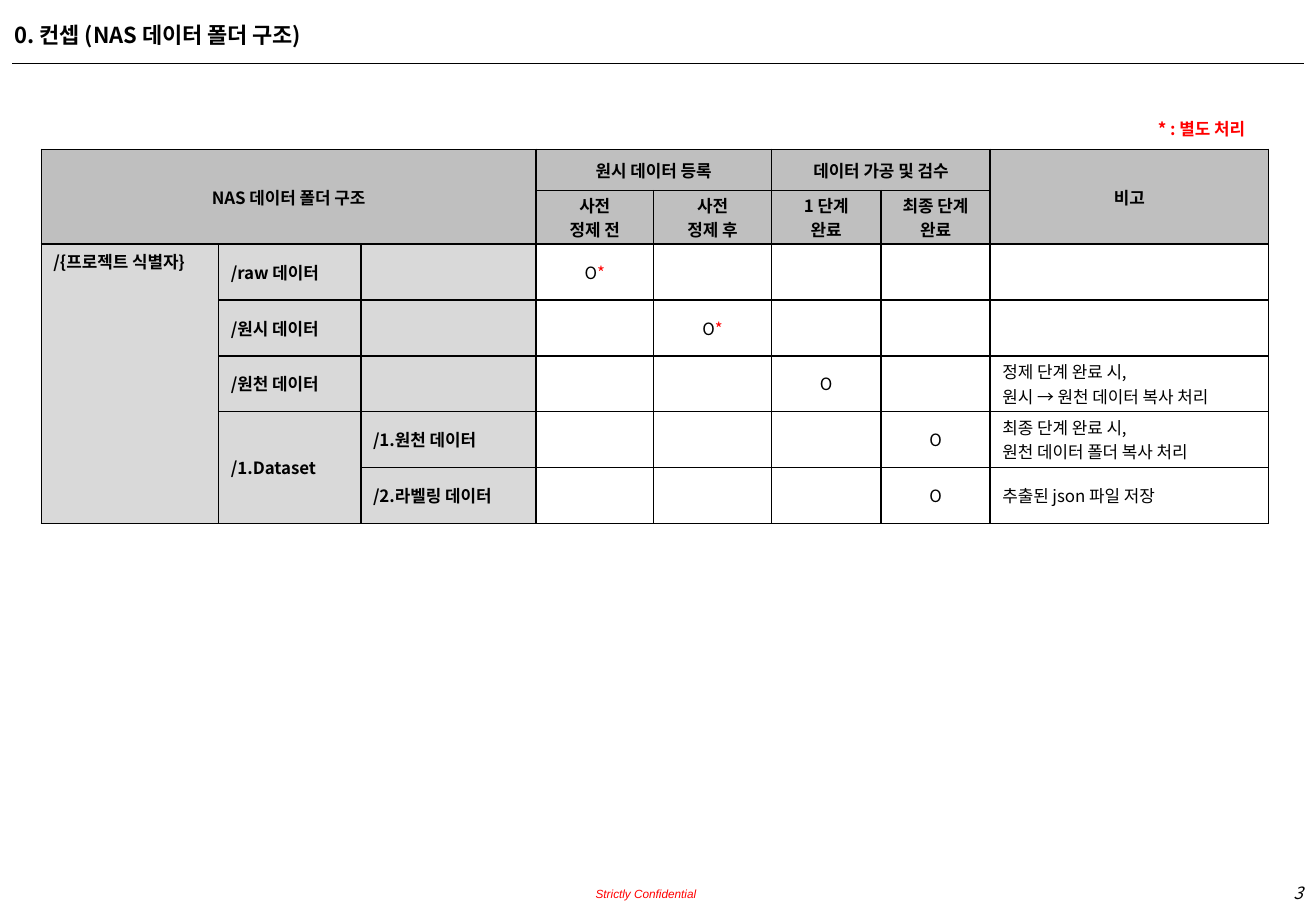
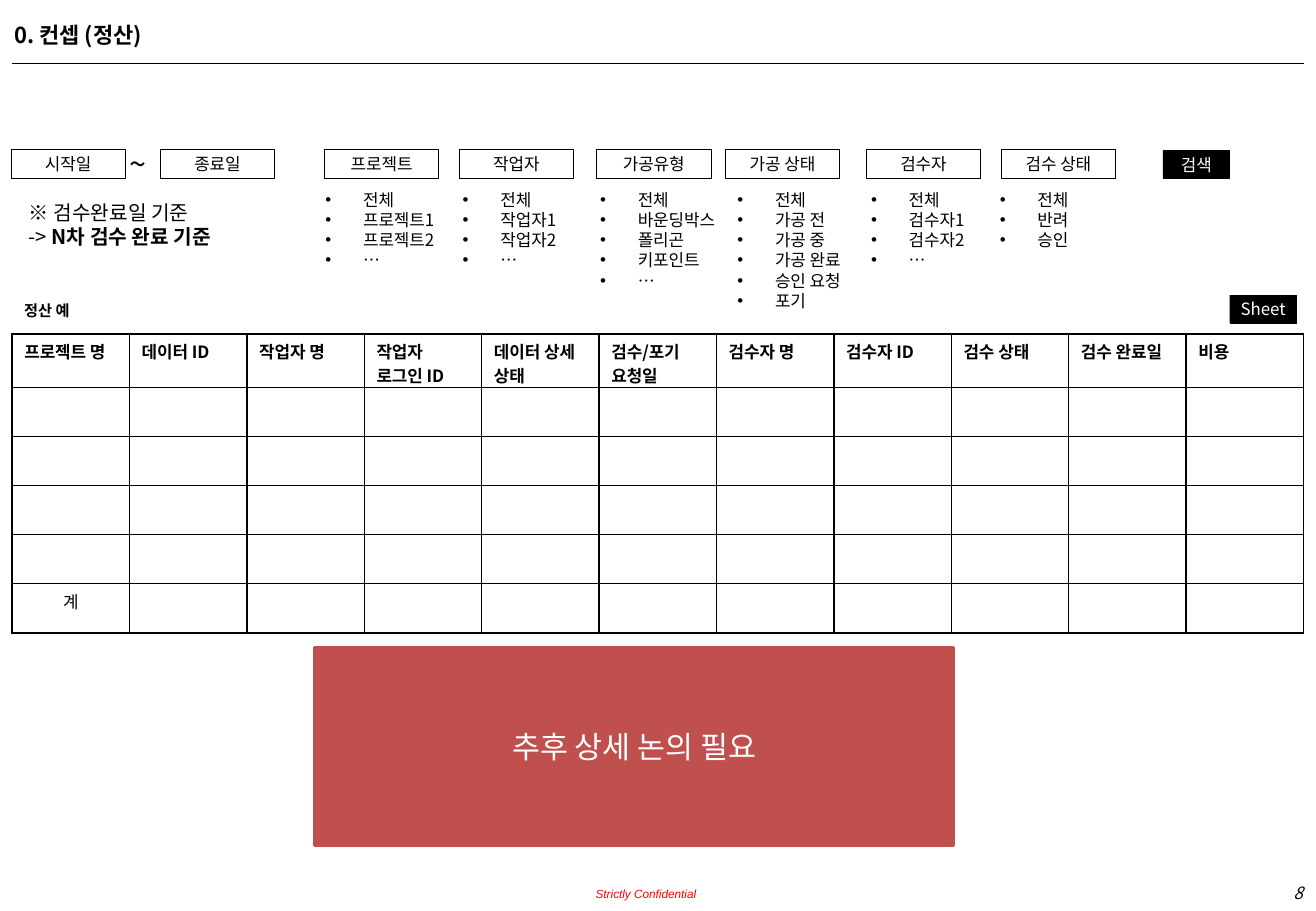
from lxml.etree import SubElement
from pptx import Presentation
from pptx.dml.color import RGBColor
from pptx.enum.shapes import MSO_CONNECTOR, MSO_SHAPE
from pptx.enum.text import MSO_ANCHOR, MSO_AUTO_SIZE, PP_ALIGN
from pptx.oxml.ns import qn
from pptx.util import Inches, Pt

BLACK = RGBColor(0x00, 0x00, 0x00)
WHITE = RGBColor(0xFF, 0xFF, 0xFF)
RED = RGBColor(0xFF, 0x00, 0x00)
BRICK = RGBColor(0xC0, 0x50, 0x4D)
HEAD_GRAY = RGBColor(0xBF, 0xBF, 0xBF)
PATH_GRAY = RGBColor(0xD9, 0xD9, 0xD9)

FONT = "Noto Sans CJK KR"
SLIDE_W, SLIDE_H = 10.83, 7.5
MARGIN = 0.1
CONTENT_W = SLIDE_W - 2 * MARGIN
BUTTON_H = 0.24
BUTTON_W = 0.94
ACTION_W = 0.55
FILTER_TOP = 1.23
LINE_RATIO, CELL_LINE_RATIO = 1.2, 1.44

FOLDER_COLS = [1.46, 1.17, 1.44, 0.97, 0.97, 0.9, 0.9, 2.29]
FOLDER_ROWS = [0.34, 0.44] + [0.46] * 5
FOLDER_CELLS = [
    ["NAS 데이터 폴더 구조", "", "", "원시 데이터 등록", "", "데이터 가공 및 검수", "", "비고"],
    ["", "", "", "사전\n정제 전", "사전\n정제 후", "1 단계\n완료", "최종 단계\n완료", ""],
    ["/{프로젝트 식별자}", "/raw 데이터", "", "O*", "", "", "", ""],
    ["", "/원시 데이터", "", "", "O*", "", "", ""],
    ["", "/원천 데이터", "", "", "", "O", "",
     "정제 단계 완료 시,\n원시 → 원천 데이터 복사 처리"],
    ["", "/1.Dataset", "/1.원천 데이터", "", "", "", "O",
     "최종 단계 완료 시,\n원천 데이터 폴더 복사 처리"],
    ["", "", "/2.라벨링 데이터", "", "", "", "O", "추출된 json 파일 저장"],
]
FOLDER_MERGES = [((0, 0), (1, 2)), ((0, 3), (0, 4)), ((0, 5), (0, 6)),
                 ((0, 7), (1, 7)), ((2, 0), (6, 0)), ((5, 1), (6, 1))]

PAY_HEADERS = ["프로젝트 명", "데이터 ID", "작업자 명", "작업자 로그인 ID",
               "데이터 상세 상태", "검수/포기 요청일", "검수자 명", "검수자 ID",
               "검수 상태", "검수 완료일", "비용"]
PAY_H, PAY_HEAD_H, PAY_BODY_ROWS = 2.46, 0.44, 5
PAY_ROWS = [PAY_HEAD_H] + [(PAY_H - PAY_HEAD_H) / PAY_BODY_ROWS] * PAY_BODY_ROWS

DATE_BUTTONS = [("시작일", 0.09), ("종료일", 1.32)]
FILTERS = [
    ("프로젝트", 2.67, 2.58, 1.16, ["전체", "프로젝트1", "프로젝트2", "…"]),
    ("작업자", 3.78, 3.71, 1.04, ["전체", "작업자1", "작업자2", "…"]),
    ("가공유형", 4.91, 4.84, 1.22, ["전체", "바운딩박스", "폴리곤", "키포인트", "…"]),
    ("가공 상태", 5.97, 5.97, 1.13,
     ["전체", "가공 전", "가공 중", "가공 완료", "승인 요청", "포기"]),
    ("검수자", 7.13, 7.07, 1.04, ["전체", "검수자1", "검수자2", "…"]),
    ("검수 상태", 8.24, 8.13, 0.8, ["전체", "반려", "승인"]),
]


def add_run(p, text, color, name=FONT, **font):
    r = p.add_run()
    r.text = text
    for key, value in {"name": name, **font}.items():
        setattr(r.font, key, value)
    r.font.color.rgb = color
    SubElement(r._r.get_or_add_rPr(), qn("a:ea")).set("typeface", name)


def add_bullet(p):
    pPr = p._p.get_or_add_pPr()
    pPr.set("marL", str(Inches(0.31)))
    pPr.set("indent", str(-Inches(0.31)))
    SubElement(pPr, qn("a:buFont")).set("typeface", "Arial")
    SubElement(pPr, qn("a:buChar")).set("char", "•")


def write(tf, lines, size=10, color=BLACK, align=PP_ALIGN.LEFT, bullets=False,
          ratio=LINE_RATIO, **font):
    for i, line in enumerate(lines):
        p = tf.add_paragraph() if i else tf.paragraphs[0]
        p.alignment = align
        p.line_spacing = Pt(round(size * ratio, 1))
        if bullets:
            add_bullet(p)
        for text, extra in [(line, {})] if isinstance(line, str) else line:
            add_run(p, text, **{"color": color, "size": Pt(size), **font, **extra})


def set_frame(tf, anchor=MSO_ANCHOR.TOP, inset=None):
    for key, value in {"word_wrap": True, "auto_size": MSO_AUTO_SIZE.NONE,
                       "vertical_anchor": anchor}.items():
        setattr(tf, key, value)
    x, y = inset or (0.1, 0.05)
    tf.margin_left = tf.margin_right = Inches(x)
    tf.margin_top = tf.margin_bottom = Inches(y)


def add_text(s, box, lines, anchor=MSO_ANCHOR.TOP, inset=None, **style):
    tf = s.shapes.add_textbox(*map(Inches, box)).text_frame
    set_frame(tf, anchor, inset)
    write(tf, lines, **style)


def add_box(s, box, text, fill=None, line=BLACK, line_w=0.25, **style):
    sp = s.shapes.add_shape(MSO_SHAPE.RECTANGLE, *map(Inches, box))
    sp.shadow.inherit = False
    if fill is None:
        sp.fill.background()
    else:
        sp.fill.solid()
        sp.fill.fore_color.rgb = fill
    sp.line.color.rgb = line
    sp.line.width = Pt(line_w)
    set_frame(sp.text_frame, MSO_ANCHOR.MIDDLE, (0, 0))
    write(sp.text_frame, [text], align=PP_ALIGN.CENTER, **style)


def add_rule(s, y):
    rule = s.shapes.add_connector(MSO_CONNECTOR.STRAIGHT, Inches(MARGIN), Inches(y),
                                  Inches(SLIDE_W - MARGIN), Inches(y))
    rule.line.color.rgb = BLACK
    rule.line.width = Pt(0.75)
    SubElement(rule._element.spPr, qn("a:effectLst"))


def add_borders(cell):
    tcPr = cell._tc.get_or_add_tcPr()
    for side in ("lnL", "lnR", "lnT", "lnB"):
        ln = SubElement(tcPr, qn(f"a:{side}"), w=str(Pt(1)))
        solid = SubElement(ln, qn("a:solidFill"))
        SubElement(solid, qn("a:srgbClr")).set("val", str(BLACK))


def format_cell(cell, text, anchor, fill=None, **style):
    add_borders(cell)
    if fill is None:
        cell.fill.background()
    else:
        cell.fill.solid()
        cell.fill.fore_color.rgb = fill
    top, bottom = (0.02, 0.02) if anchor == MSO_ANCHOR.MIDDLE else (0.04, 0)
    for key, value in {"vertical_anchor": anchor, "margin_top": Inches(top),
                       "margin_bottom": Inches(bottom)}.items():
        setattr(cell, key, value)
    if text:
        lines = [[("O", {}), ("*", {"color": RED})]] if text == "O*" else text.split("\n")
        write(cell.text_frame, lines, ratio=CELL_LINE_RATIO, **style)
    else:
        SubElement(cell.text_frame.paragraphs[0]._p, qn("a:endParaRPr")).set("sz", "1000")


def add_grid(s, left, top, cols, rows, cells, style_of, merges=()):
    frame = s.shapes.add_table(len(rows), len(cols), Inches(left), Inches(top),
                               Inches(sum(cols)), Inches(sum(rows)))
    table = frame.table
    table.first_row = table.horz_banding = False
    for col, width in zip(table.columns, cols):
        col.width = Inches(width)
    for row, height in zip(table.rows, rows):
        row.height = Inches(height)
    for r, texts in enumerate(cells):
        for c, text in enumerate(texts):
            format_cell(table.cell(r, c), text, **style_of(r, c))
    for first, last in merges:
        table.cell(*first).merge(table.cell(*last))


def folder_style(r, c):
    is_head, is_path = r < 2, c < 3
    fill = HEAD_GRAY if is_head else PATH_GRAY if is_path else None
    centred = is_head or 3 <= c < 7
    return {"anchor": MSO_ANCHOR.TOP if (r, c) == (2, 0) else MSO_ANCHOR.MIDDLE,
            "fill": fill, "bold": is_head or is_path,
            "align": PP_ALIGN.CENTER if centred else PP_ALIGN.LEFT}


def pay_style(r, c):
    return {"anchor": MSO_ANCHOR.TOP, "bold": r == 0,
            "align": PP_ALIGN.CENTER if r else PP_ALIGN.LEFT}


def add_page(prs, title, number):
    s = prs.slides.add_slide(prs.slide_layouts[5])
    heading = s.shapes.title
    for key, value in zip(("left", "top", "width", "height"), (0.02, 0.13, 10.52, 0.32)):
        setattr(heading, key, Inches(value))
    set_frame(heading.text_frame)
    write(heading.text_frame, [title], size=13, bold=True)
    add_rule(s, 0.52)
    add_text(s, (4.2, 7.18, 1.53, 0.24), ["Strictly Confidential"], MSO_ANCHOR.BOTTOM,
             (0, 0), size=7, color=RED, align=PP_ALIGN.RIGHT, name="Arial", italic=True)
    add_text(s, (9.15, 7.22, 1.67, 0.27), [str(number)], align=PP_ALIGN.RIGHT, italic=True)
    return s


def build_folders(prs):
    s = add_page(prs, "0. 컨셉 (NAS 데이터 폴더 구조)", 3)
    add_grid(s, 0.34, 1.23, FOLDER_COLS, FOLDER_ROWS, FOLDER_CELLS, folder_style,
             FOLDER_MERGES)
    add_text(s, (9.43, 0.93, 1.16, 0.27), ["* : 별도 처리"], color=RED, bold=True)


def build_payment(prs):
    s = add_page(prs, "0. 컨셉 (정산)", 8)
    n = len(PAY_HEADERS)
    blank = [""] * n
    cells = [PAY_HEADERS] + [blank] * (PAY_BODY_ROWS - 1) + [["계"] + blank[1:]]
    add_grid(s, MARGIN, 2.75, [CONTENT_W / n] * n, PAY_ROWS, cells, pay_style)
    add_text(s, (MARGIN, 2.43, 0.7, 0.25), ["정산 예"], size=9, bold=True)
    for label, left in DATE_BUTTONS:
        add_box(s, (left, FILTER_TOP, BUTTON_W, BUTTON_H), label)
    add_text(s, (0.97, 1.15, 0.38, 0.4), ["~"], size=18)
    for label, left, list_left, list_w, items in FILTERS:
        add_box(s, (left, FILTER_TOP, BUTTON_W, BUTTON_H), label)
        add_text(s, (list_left, 1.51, list_w, 0.1 + len(items) / 6), items, bullets=True)
    for label, left, top in [("검색", 9.57, 1.24), ("Sheet", 10.12, 2.43)]:
        add_box(s, (left, top, ACTION_W, 0.23), label, fill=BLACK, color=WHITE)
    add_text(s, (0.14, 1.6, 1.93, 0.5),
             ["※ 검수완료일 기준", [("-> ", {}), ("N차 검수 완료 기준", {"bold": True})]],
             size=12)
    add_box(s, (2.59, 5.33, 5.26, 1.63), "추후 상세 논의 필요", fill=BRICK, line=BRICK,
            line_w=2, size=18, color=WHITE)


def main():
    prs = Presentation()
    prs.slide_width, prs.slide_height = Inches(SLIDE_W), Inches(SLIDE_H)
    build_folders(prs)
    build_payment(prs)
    prs.save("out.pptx")


if __name__ == "__main__":
    main()
